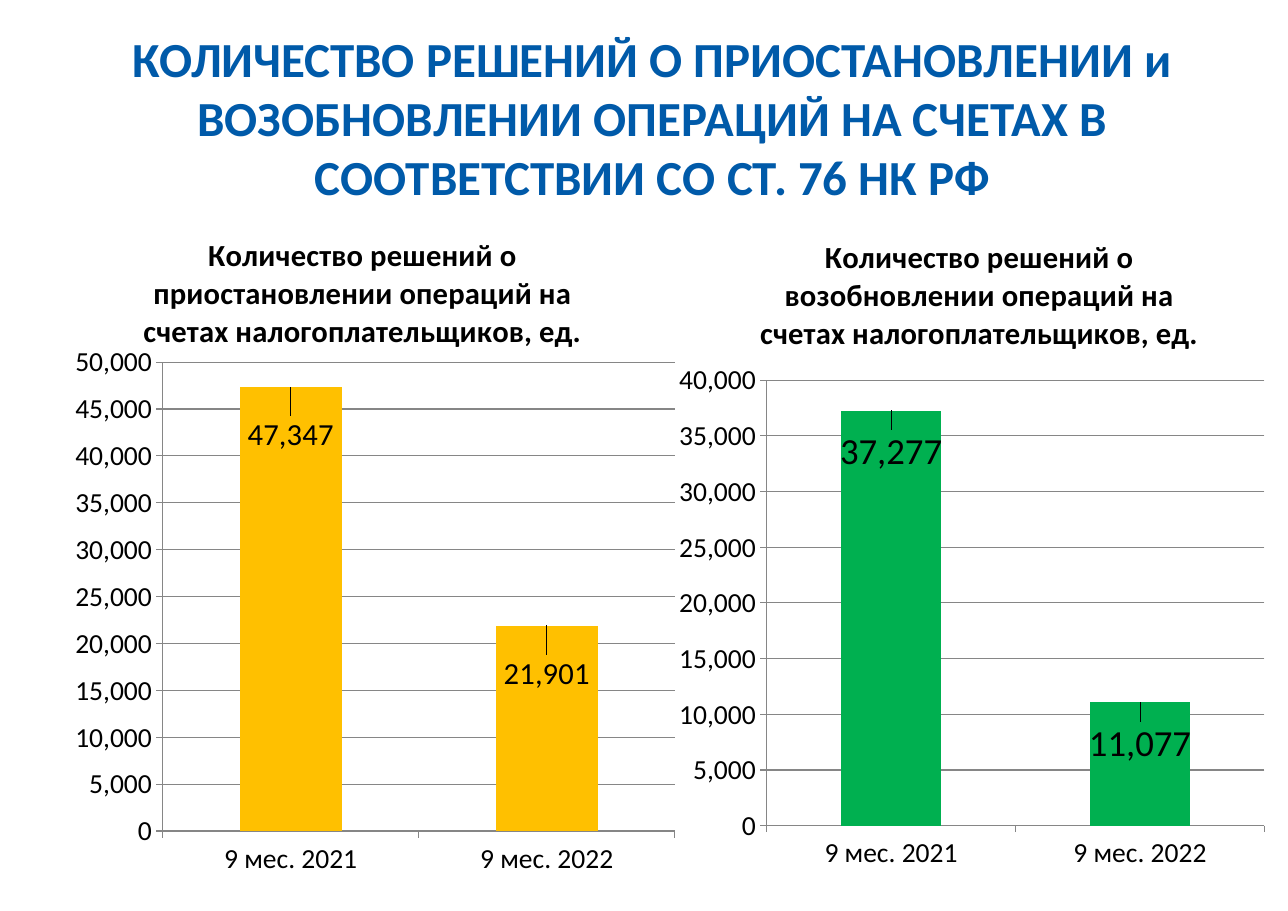
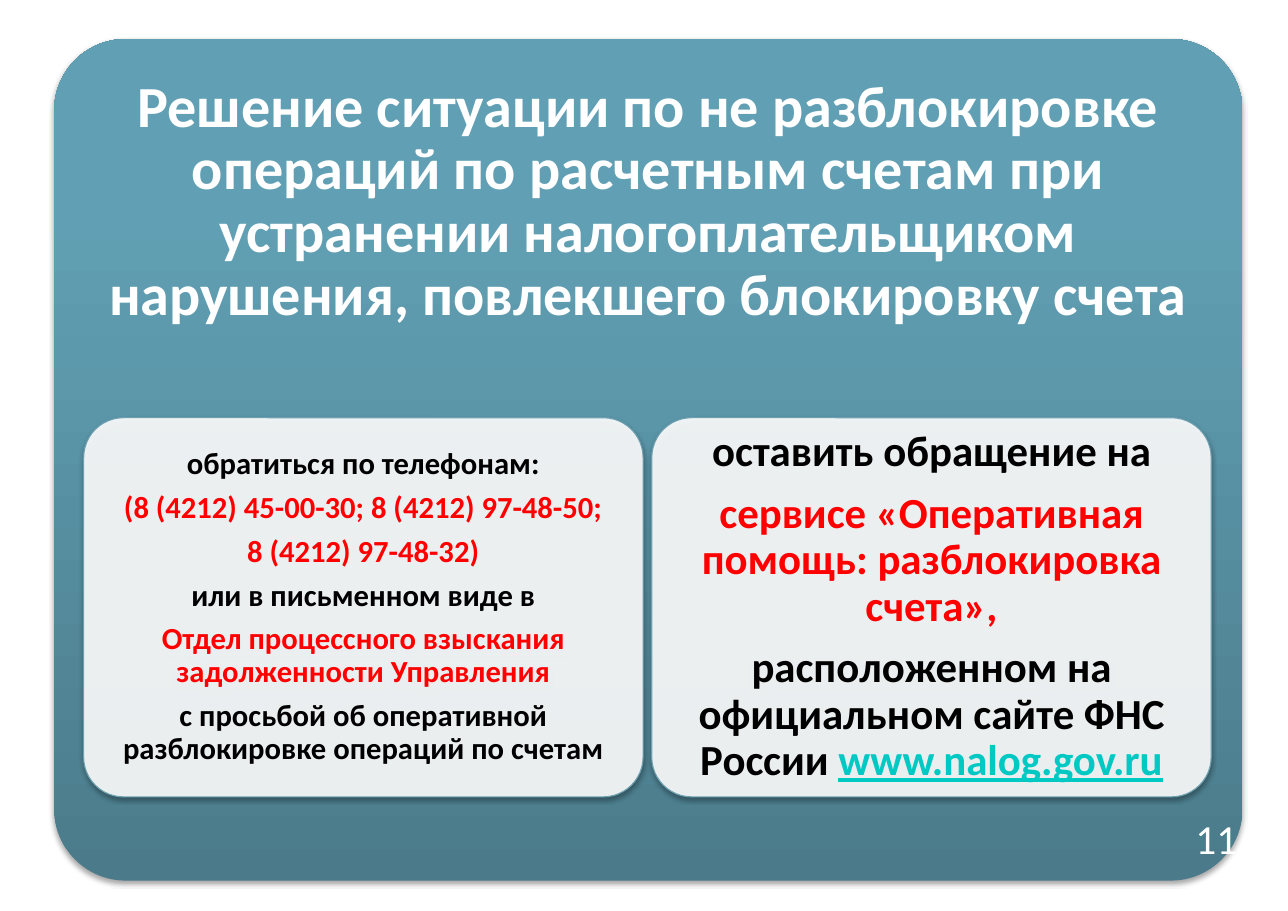
from pptx import Presentation
from pptx.chart.data import CategoryChartData
from pptx.dml.color import RGBColor
from pptx.enum.chart import XL_CHART_TYPE, XL_LABEL_POSITION, XL_TICK_MARK
from pptx.enum.shapes import MSO_SHAPE
from pptx.enum.text import MSO_ANCHOR, MSO_AUTO_SIZE, PP_ALIGN
from pptx.oxml import parse_xml
from pptx.oxml.ns import nsdecls, qn
from pptx.util import Cm, Pt

FONT = "Calibri"
WHITE = RGBColor(0xFF, 0xFF, 0xFF)
BLACK = RGBColor(0x00, 0x00, 0x00)
BLUE = RGBColor(0x00, 0x5A, 0xA9)
RED = RGBColor(0xFF, 0x00, 0x00)
AMBER = RGBColor(0xFF, 0xC0, 0x00)
GREEN = RGBColor(0x00, 0xB0, 0x50)
GREY = RGBColor(0x86, 0x86, 0x86)
LINK = RGBColor(0x00, 0xC8, 0xC3)
TEAL = RGBColor(0x61, 0xA0, 0xB4)
DARK_TEAL = RGBColor(0x4B, 0x7B, 0x8B)
EDGE = RGBColor(0x6E, 0xA0, 0xB0)


def box(x, y, w, h):
    return Cm(x), Cm(y), Cm(w), Cm(h)


def set_layout(parent, index, **values):
    for old in parent.findall(qn("c:layout")):
        parent.remove(old)
    tags = "".join(f'<c:{k} val="{v}"/>' for k, v in values.items())
    parent.insert(index, parse_xml(
        f'<c:layout {nsdecls("c")}><c:manualLayout>{tags}</c:manualLayout></c:layout>'))


class Deck:
    def __init__(self):
        self.prs = Presentation()
        self.prs.slide_width, self.prs.slide_height = Cm(29.7), Cm(21)
        self.s = None

    def slide(self):
        self.s = self.prs.slides.add_slide(self.prs.slide_layouts[5])

    def style(self, font, size, color, bold=False):
        font.name, font.size, font.bold = FONT, Pt(size), bold
        font.color.rgb = color

    def frame(self, tf, inset_x, inset_y, anchor):
        tf.word_wrap, tf.auto_size = True, MSO_AUTO_SIZE.NONE
        tf.vertical_anchor = anchor
        tf.margin_left = tf.margin_right = Cm(inset_x)
        tf.margin_top = tf.margin_bottom = Cm(inset_y)

    def title(self, text, place, size, color, anchor=MSO_ANCHOR.MIDDLE,
              insets=(0.28, 0.15), spacing=1.0):
        sp = self.s.shapes.title
        sp.left, sp.top, sp.width, sp.height = box(*place)
        sp.element.getparent().append(sp.element)
        tf = sp.text_frame
        self.frame(tf, *insets, anchor)
        tf.text = text
        p = tf.paragraphs[0]
        p.alignment, p.line_spacing = PP_ALIGN.CENTER, spacing
        self.style(p.runs[0].font, size, color, True)

    def chart(self, title, place, values, top, color, label_size, title_at, plot_y):
        data = CategoryChartData(number_format="#,##0")
        data.categories = ["9 мес. 2021", "9 мес. 2022"]
        data.add_series(title, values)
        chart = self.s.shapes.add_chart(
            XL_CHART_TYPE.COLUMN_CLUSTERED, *box(*place), data).chart
        self.style(chart.font, 18, BLACK)
        chart.has_legend = False
        chart.has_title = True
        tf = chart.chart_title.text_frame
        tf.text = title
        self.style(tf.paragraphs[0].runs[0].font, 20, BLACK, True)
        chart.chart_title.include_in_layout = False

        axis = chart.value_axis
        axis.minimum_scale, axis.maximum_scale, axis.major_unit = 0, top, 5000
        axis.tick_labels.number_format = "#,##0"
        axis.tick_labels.number_format_is_linked = False
        axis.has_major_gridlines = True
        for part in (axis, chart.category_axis, axis.major_gridlines):
            part.format.line.color.rgb = GREY
            part.format.line.width = Pt(0.75)
        for part in (axis, chart.category_axis):
            part.major_tick_mark = XL_TICK_MARK.OUTSIDE

        plot = chart.plots[0]
        plot.gap_width, plot.vary_by_categories = 150, False
        series = plot.series[0]
        series.format.fill.solid()
        series.format.fill.fore_color.rgb = color
        for i in range(len(values)):
            label = series.points[i].data_label
            self.style(label.font, label_size, BLACK)
            label.position = XL_LABEL_POSITION.OUTSIDE_END

        root = chart.element
        for label in root.iter(qn("c:dLbl")):
            set_layout(label, 1, x=0, y=0.1)
        x, y = title_at
        set_layout(root.find(".//" + qn("c:title")), 1,
                   xMode="edge", yMode="edge", x=x, y=y)
        set_layout(root.find(".//" + qn("c:plotArea")), 0, layoutTarget="inner",
                   xMode="edge", yMode="edge", x=0.16, y=plot_y,
                   w=0.82, h=round(0.92 - plot_y, 2))

    def rounded(self, place, adj):
        sp = self.s.shapes.add_shape(MSO_SHAPE.ROUNDED_RECTANGLE, *box(*place))
        sp.adjustments[0] = adj
        sp.shadow.inherit = False
        sp.element.spPr.find(qn("a:effectLst")).append(parse_xml(
            f'<a:outerShdw {nsdecls("a")} blurRad="{Pt(3.1)}" dist="{Pt(1.8)}" '
            'dir="5400000" rotWithShape="0"><a:srgbClr val="000000">'
            '<a:alpha val="35000"/></a:srgbClr></a:outerShdw>'))
        return sp

    def card(self, place):
        sp = self.rounded(place, 0.085)
        sp.line.fill.background()
        sp.fill.gradient()
        sp.fill.gradient_angle = 90
        for stop, color, position in zip(
                sp.fill.gradient_stops, (DARK_TEAL, TEAL), (0, 0.8)):
            stop.color.rgb, stop.position = color, position

    def panel(self, place, paragraphs, size, inset, gap):
        sp = self.rounded(place, 0.105)
        sp.line.color.rgb, sp.line.width = EDGE, Pt(0.75)
        sp.fill.solid()
        sp.fill.fore_color.rgb = WHITE
        sp.element.spPr.find(".//" + qn("a:srgbClr")).append(
            parse_xml(f'<a:alpha {nsdecls("a")} val="90000"/>'))
        tf = sp.text_frame
        self.frame(tf, inset, inset, MSO_ANCHOR.MIDDLE)
        for i, runs in enumerate(paragraphs):
            p = tf.add_paragraph() if i else tf.paragraphs[0]
            p.alignment, p.line_spacing, p.space_after = PP_ALIGN.CENTER, 0.9, Pt(gap)
            for text, color in runs:
                r = p.add_run()
                r.text = text
                self.style(r.font, size, color, True)
                if color == LINK:
                    r.font.underline = True

    def number(self, text):
        tf = self.s.shapes.add_textbox(*box(27.05, 18.5, 2, 1.93)).text_frame
        self.frame(tf, 0.28, 0.15, MSO_ANCHOR.MIDDLE)
        tf.text = text
        p = tf.paragraphs[0]
        p.alignment, p.line_spacing = PP_ALIGN.CENTER, Pt(24)
        self.style(p.runs[0].font, 27, WHITE)


def main():
    deck = Deck()

    deck.slide()
    deck.chart("Количество решений о возобновлении операций на счетах налогоплательщиков, ед.",
               (15.44, 4.5, 14, 15.8), (37277, 11077), 40000, GREEN, 24,
               (0.14, 0.05), 0.27)
    deck.chart("Количество решений о приостановлении операций на счетах налогоплательщиков, ед.",
               (1.45, 4.09, 14.4, 16.38), (47347, 21901), 50000, AMBER, 20,
               (0.12, 0.07), 0.26)
    deck.title("КОЛИЧЕСТВО РЕШЕНИЙ О ПРИОСТАНОВЛЕНИИ и ВОЗОБНОВЛЕНИИ ОПЕРАЦИЙ "
               "НА СЧЕТАХ В СООТВЕТСТВИИ СО СТ. 76 НК РФ",
               (1.25, 1.1, 27.6, 3.2), 32, BLUE)

    deck.slide()
    deck.card((1.25, 0.9, 27.4, 19.4))
    deck.title("Решение ситуации по не разблокировке операций по расчетным счетам при "
               "устранении налогоплательщиком нарушения, повлекшего блокировку счета",
               (1.73, 1.37, 26.44, 7), 38, WHITE, MSO_ANCHOR.TOP, (0.4, 0.4), 0.9)
    phone = [
        [("обратиться по телефонам:", BLACK)],
        [("(8 (4212) 45-00-30; 8 (4212) 97-48-50;", RED)],
        [("8 (4212) 97-48-32)", RED)],
        [("или в письменном виде в", BLACK)],
        [("Отдел процессного взыскания задолженности Управления", RED)],
        [("с просьбой об оперативной разблокировке операций по счетам", BLACK)],
    ]
    online = [
        [("оставить обращение на", BLACK)],
        [("сервисе «Оперативная помощь: разблокировка счета»,", RED)],
        [("расположенном на официальном сайте ФНС России ", BLACK),
         ("www.nalog.gov.ru", LINK)],
    ]
    panels = ((phone, 20, 0.2, 7), (online, 28, 0.3, 10))
    for i, (paragraphs, size, inset, gap) in enumerate(panels):
        deck.panel((1.93 + 13.1 * i, 9.63, 12.9, 8.74), paragraphs, size, inset, gap)
    deck.number("11")

    deck.prs.save("out.pptx")


if __name__ == "__main__":
    main()
